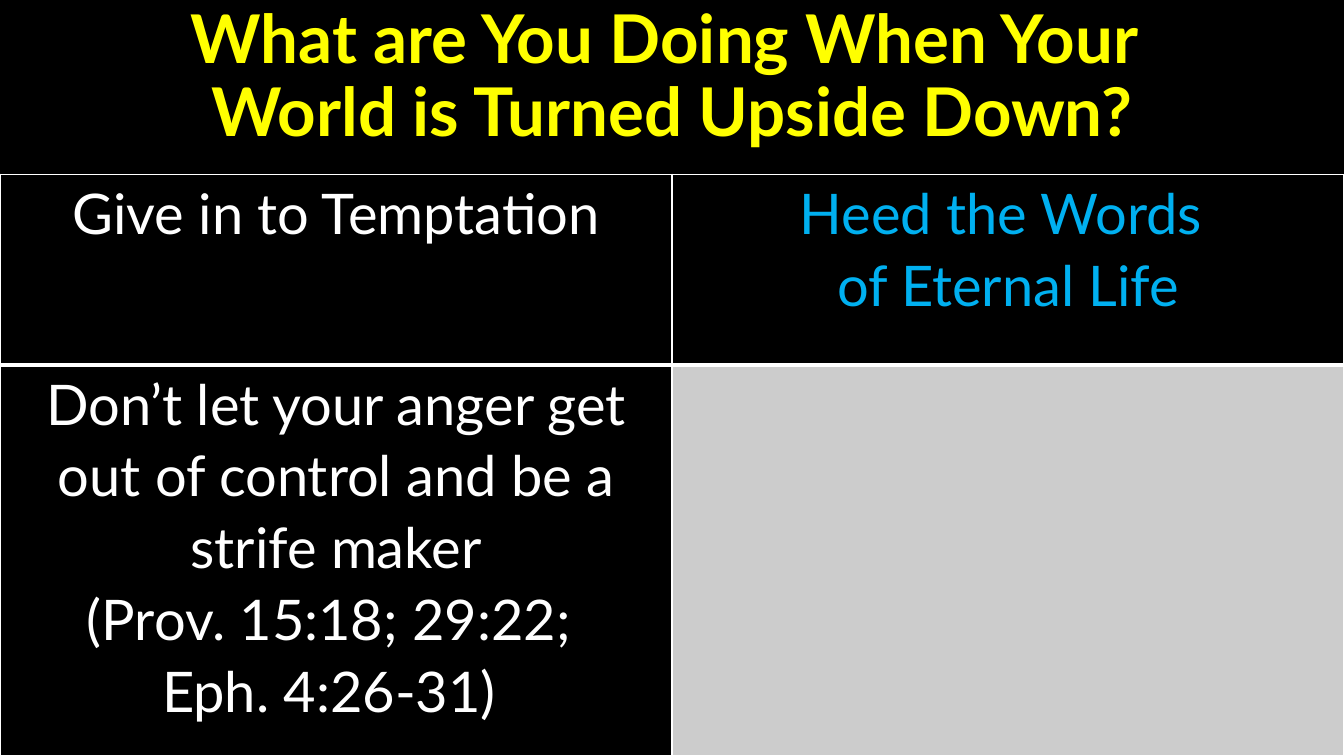
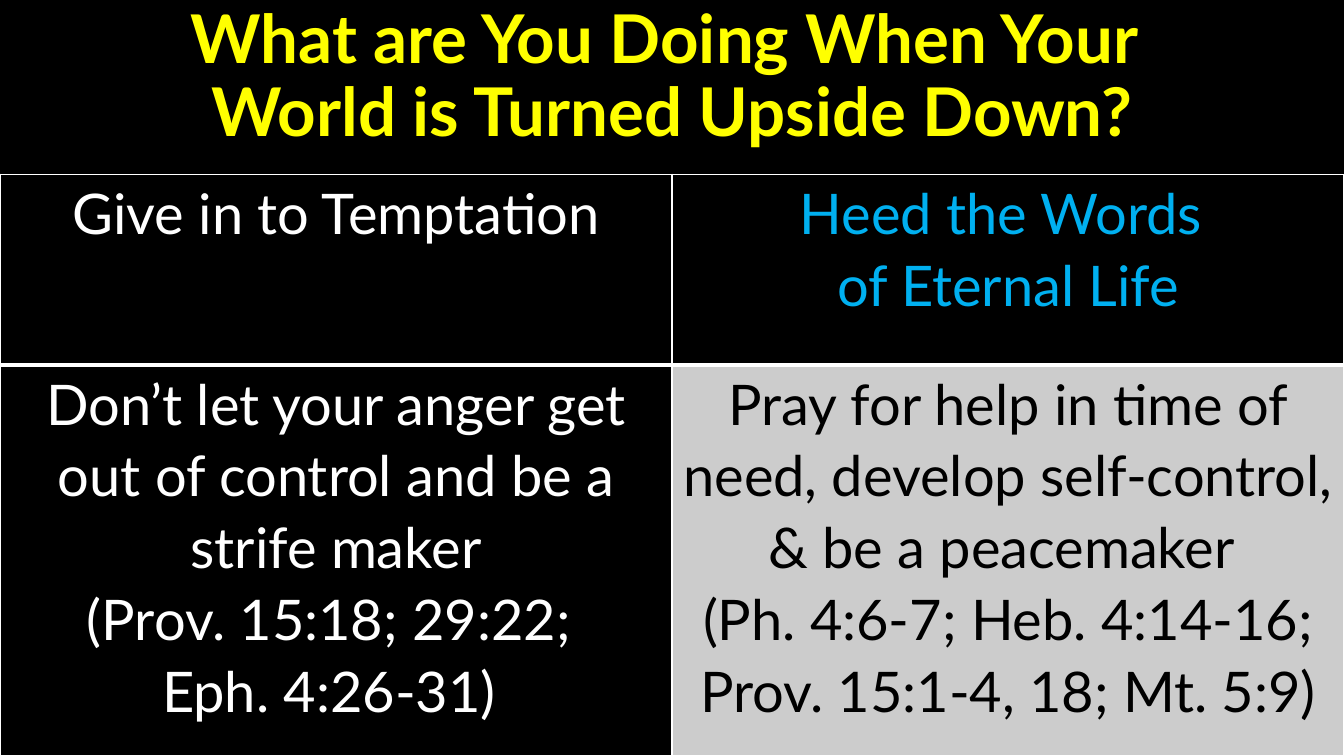
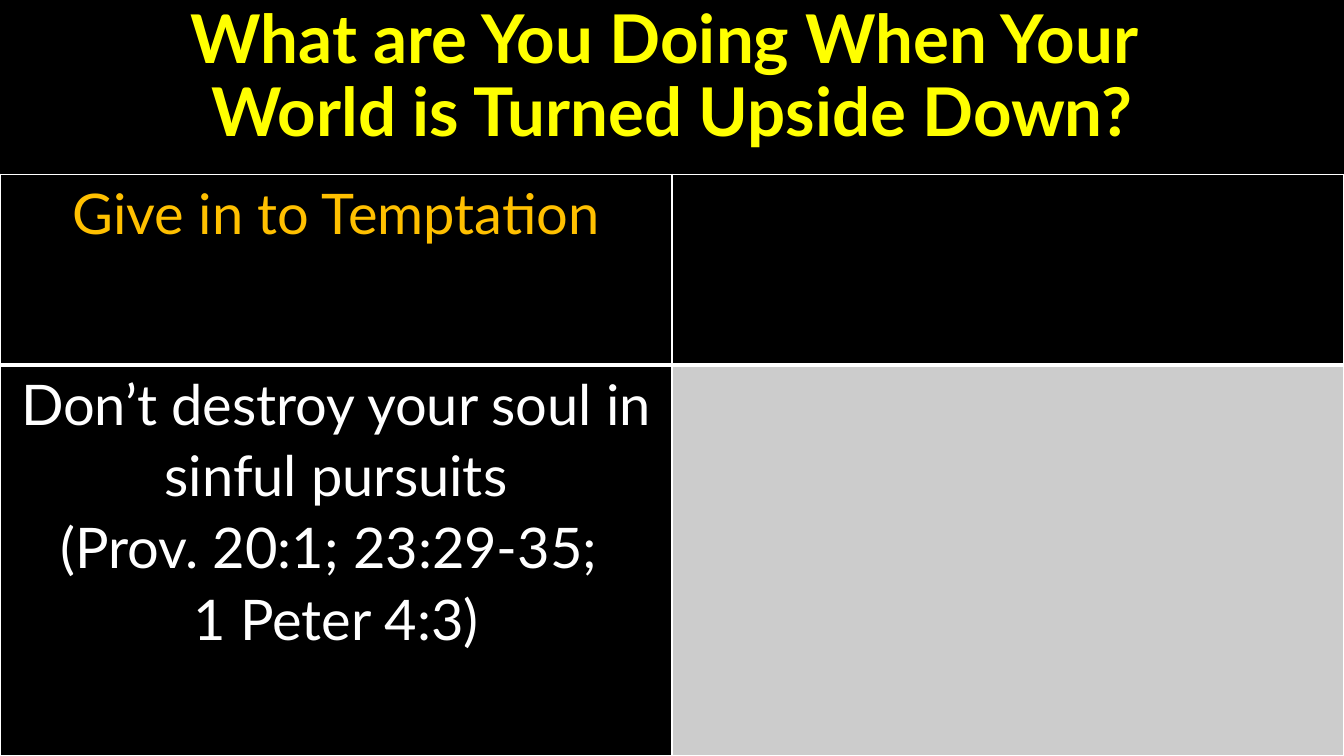
from lxml import etree
from pptx import Presentation
from pptx import util as u
from pptx.dml.color import RGBColor
from pptx.enum import text
from pptx.oxml import ns

HUES = {"back": "000000", "head": "FFFF00", "white": "FFFFFF", "blue": "00B0F0",
        "gold": "FFC000", "gray": "CCCCCC", "black": "000000"}
FACE = "Lato"
WIDE, HIGH = 33.87, 19.05
HEAD = (0, 0, WIDE, 3.94)
GRID = (0, 4.39, WIDE, 14.66)
TOP_ROW = 4.81

TITLE = "What are You Doing When Your \vWorld is Turned Upside Down?"
GIVE = ["Give in to Temptation"]
HEED = ["Heed the Words ", "of Eternal Life"]
ANGER = ["Don’t let your anger get out of control and be a strife maker",
         "(Prov. 15:18; 29:22; ", "Eph. 4:26-31) "]
PRAY = ["Pray for help in time of need, develop self-control,", "& be a peacemaker ",
        "(Ph. 4:6-7; Heb. 4:14-16;", "Prov. 15:1-4, 18; Mt. 5:9)"]
SOUL = ["Don’t destroy your soul in sinful pursuits",
        "(Prov. 20:1; 23:29-35; ", "1 Peter 4:3)"]

FILLS = [["back", "back"], ["back", "gray"]]
SLIDES = [
    [[(GIVE, "white"), (HEED, "blue")], [(ANGER, "white"), ([], "black")]],
    [[(GIVE, "white"), (HEED, "blue")], [(ANGER, "white"), (PRAY, "black")]],
    [[(GIVE, "gold"), ([], "blue")], [(SOUL, "white"), ([], "black")]],
]


def rgb(hue):
    """Return the colour object for a named hue."""
    return RGBColor.from_string(HUES[hue])


def assign(item, **vals):
    """Set each given attribute on the item."""
    for key, val in vals.items():
        setattr(item, key, val)


def style(para, hue, size, bold, gap):
    """Centre a paragraph and set its font and line spacing."""
    assign(para, alignment=text.PP_ALIGN.CENTER, line_spacing=gap)
    assign(para.font, name=FACE, size=u.Pt(size), bold=bold)
    para.font.color.rgb = rgb(hue)


def rule(cell, side, width):
    """Draw a white border on one side of a cell."""
    line = etree.SubElement(cell._tc.get_or_add_tcPr(), ns.qn("a:ln" + side),
                            w=str(u.Pt(width)))
    fill = etree.SubElement(line, ns.qn("a:solidFill"))
    etree.SubElement(fill, ns.qn("a:srgbClr"), val=HUES["white"])


def add_head(slide, box):
    """Place and format the title in its box."""
    left, top, width, height = map(u.Cm, box)
    head = slide.shapes.title
    assign(head, left=left, top=top, width=width, height=height)
    frame = head.text_frame
    frame.text = TITLE
    assign(frame, word_wrap=True, auto_size=text.MSO_AUTO_SIZE.NONE,
           vertical_anchor=text.MSO_ANCHOR.MIDDLE)
    style(frame.paragraphs[0], "head", 48, True, 0.9)


def fill_cell(cell, lines, hue, back, edges):
    """Give a cell its borders, fill and centred lines."""
    for side, width in edges.items():
        rule(cell, side, width)
    cell.fill.solid()
    cell.fill.fore_color.rgb = rgb(back)
    assign(cell, margin_left=u.Cm(0.18), margin_right=u.Cm(0.18),
           margin_top=0, margin_bottom=0)
    if lines:
        cell.text_frame.text = "\n".join(lines)
        for para in cell.text_frame.paragraphs:
            style(para, hue, 40, False, 1.07)


def add_grid(slide, box, rows):
    """Place the two-by-two table of contrasts in its box."""
    grid = slide.shapes.add_table(2, 2, *map(u.Cm, box)).table
    assign(grid, first_row=False, horz_banding=False)
    for col in grid.columns:
        col.width = u.Cm(box[2] / 2)
    for row, high in zip(grid.rows, (TOP_ROW, box[3] - TOP_ROW)):
        row.height = u.Cm(high)
    for r, row in enumerate(rows):
        edges = {"L": 1, "R": 1, "T": 3 if r else 1, "B": 1 if r else 3}
        for c, (lines, hue) in enumerate(row):
            fill_cell(grid.cell(r, c), lines, hue, FILLS[r][c], edges)


def main():
    """Build and save the deck."""
    deck = Presentation()
    assign(deck, slide_width=u.Cm(WIDE), slide_height=u.Cm(HIGH))
    back = deck.slide_master.background.fill
    back.solid()
    back.fore_color.rgb = rgb("back")
    for rows in SLIDES:
        slide = deck.slides.add_slide(deck.slide_layouts[5])
        add_head(slide, HEAD)
        add_grid(slide, GRID, rows)
    deck.save("out.pptx")


if __name__ == "__main__":
    main()
